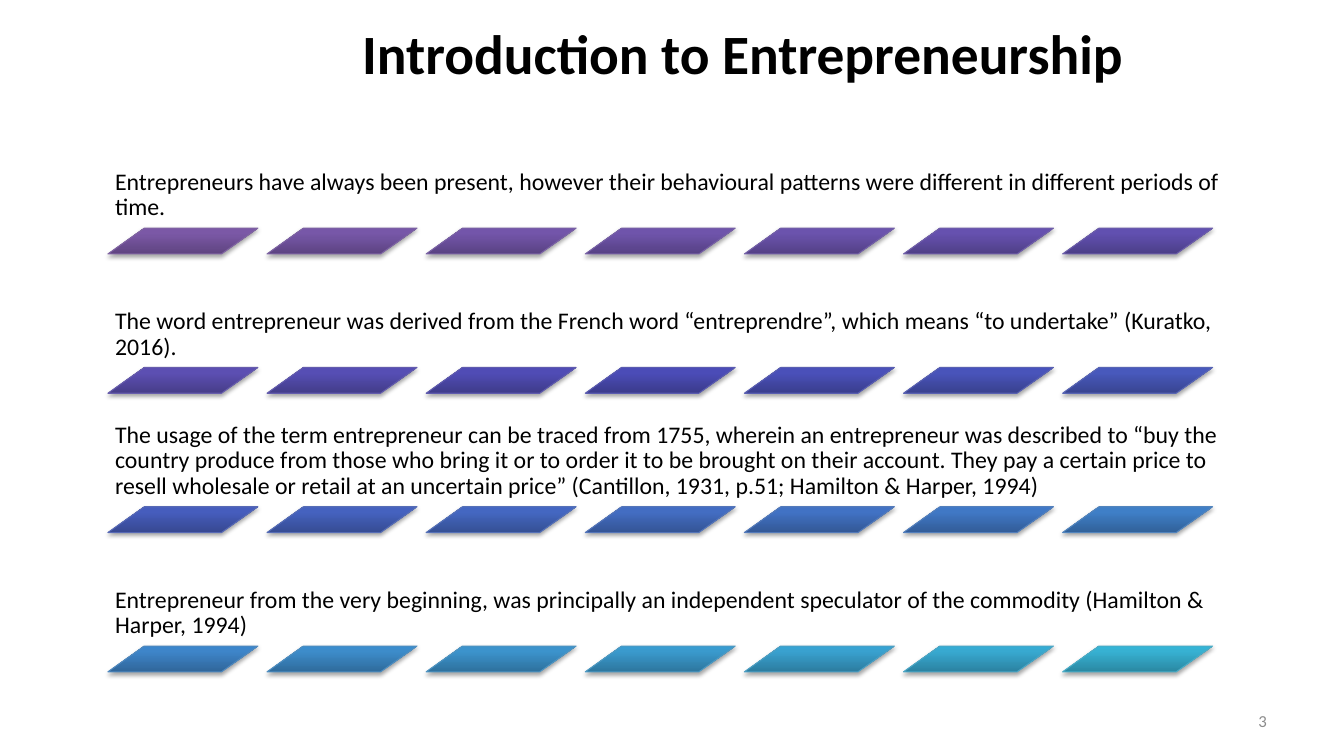
from colorsys import hls_to_rgb, rgb_to_hls

from lxml import etree
from pptx import Presentation
from pptx.dml.color import RGBColor
from pptx.enum.shapes import MSO_SHAPE as SHAPE
from pptx.enum.text import MSO_ANCHOR as ANCHOR, PP_ALIGN as ALIGN
from pptx.oxml import parse_xml
from pptx.oxml.ns import nsdecls, qn
from pptx.util import Cm, Pt

# Content
TITLE = "Introduction to Entrepreneurship"
PAGE = "3"
POINTS = [
    "Entrepreneurs have always been present, however their behavioural patterns "
    "were different in different periods of time.",
    "The word entrepreneur was derived from the French word “entreprendre”, "
    "which means “to undertake” (Kuratko, 2016).",
    "The usage of the term entrepreneur can be traced from 1755, wherein an "
    "entrepreneur was described to “buy the country produce from those who bring it "
    "or to order it to be brought on their account. They pay a certain price to resell "
    "wholesale or retail at an uncertain price” (Cantillon, 1931, p.51; Hamilton & "
    "Harper, 1994)",
    "Entrepreneur from the very beginning, was principally an independent speculator "
    "of the commodity (Hamilton & Harper, 1994)",
]

# Colours run from the first bar to the last: (first, last)
LINE_RANGE = ("8064A2", "4BACC6")
STOP_RANGES = {0: ("5F4480", "2A88A2"), 80: ("7B58A6", "37B1D2"), 100: ("7C57A8", "34B4D6")}

# Layout in cm
LEFT, TOP, ROW_STEP = 2.72, 3.17, 3.51
TEXT_W, TEXT_H = 28.45, 2.58
BARS, BAR_W, BAR_H, BAR_STEP = 7, 3.78, 0.65, 4.01

# Text formats
TITLE_FONT = {"size": Pt(39.6), "bold": True}
POINT_FONT = {"size": Pt(17)}
PAGE_FONT = {"size": Pt(12)}


def rgb(value):
    return RGBColor.from_string(value)


def blend(ends, t):
    """Hex colour at share t between two colours, by hue, lightness and saturation."""
    first, last = (rgb_to_hls(*(c / 255 for c in rgb(e))) for e in ends)
    mixed = hls_to_rgb(*(a + (b - a) * t for a, b in zip(first, last)))
    return "".join(f"{round(c * 255):02X}" for c in mixed)


def add_text(s, box, text, font, color="000000", anchor=ANCHOR.MIDDLE,
             align=ALIGN.LEFT, inset=None, spacing=None):
    tf = s.shapes.add_textbox(*map(Cm, box)).text_frame
    frame = {"word_wrap": True, "vertical_anchor": anchor}
    if inset:
        frame.update({f"margin_{side}": Cm(inset) for side in ("left", "top", "right", "bottom")})
    for name, value in frame.items():
        setattr(tf, name, value)
    p = tf.paragraphs[0]
    p.alignment, p.line_spacing = align, spacing
    r = p.add_run()
    r.text = text
    for name, value in {"name": "Calibri", **font}.items():
        setattr(r.font, name, value)
    r.font.color.rgb = rgb(color)


def add_bar(s, x, y, t):
    sp = s.shapes.add_shape(SHAPE.PARALLELOGRAM, Cm(x), Cm(y), Cm(BAR_W), Cm(BAR_H))
    sp.adjustments[0] = 1.41
    sp.line.color.rgb = rgb(blend(LINE_RANGE, t))
    sp.line.width = Pt(0.75)
    # Three-stop gradient, dark at the bottom
    sp.fill.gradient()
    sp.fill.gradient_angle = 90
    stops = sp._element.spPr.find(".//" + qn("a:gsLst"))
    for old in list(stops):
        stops.remove(old)
    for pos, ends in STOP_RANGES.items():
        gs = etree.SubElement(stops, qn("a:gs"), pos=str(pos * 1000))
        etree.SubElement(gs, qn("a:srgbClr"), val=blend(ends, t))
    # Soft shadow below
    sp.shadow.inherit = False
    sp._element.spPr.find(qn("a:effectLst")).append(parse_xml(
        f'<a:outerShdw {nsdecls("a")} blurRad="{Pt(3.1)}" dist="{Pt(1.8)}" dir="5400000" '
        'rotWithShape="0"><a:srgbClr val="000000"><a:alpha val="35000"/></a:srgbClr>'
        '</a:outerShdw>'))


def main():
    prs = Presentation()
    prs.slide_width, prs.slide_height = Cm(33.87), Cm(19.05)
    s = prs.slides.add_slide(prs.slide_layouts[6])

    add_text(s, (6.12, 0.28, 25.2, 2.06), TITLE, TITLE_FONT, align=ALIGN.CENTER)

    # Each point stands on a row of bars
    last = len(POINTS) * BARS - 1
    for row, point in enumerate(POINTS):
        y = TOP + row * ROW_STEP
        add_text(s, (LEFT, y, TEXT_W, TEXT_H), point, POINT_FONT,
                 anchor=ANCHOR.BOTTOM, inset=0.18, spacing=0.9)
        for col in range(BARS):
            add_bar(s, LEFT + col * BAR_STEP, y + TEXT_H, (row * BARS + col) / last)

    # Slide number
    add_text(s, (24.28, 17.65, 7.9, 1.02), PAGE, PAGE_FONT, "8C8C8C", align=ALIGN.RIGHT)
    prs.save("out.pptx")


if __name__ == "__main__":
    main()
